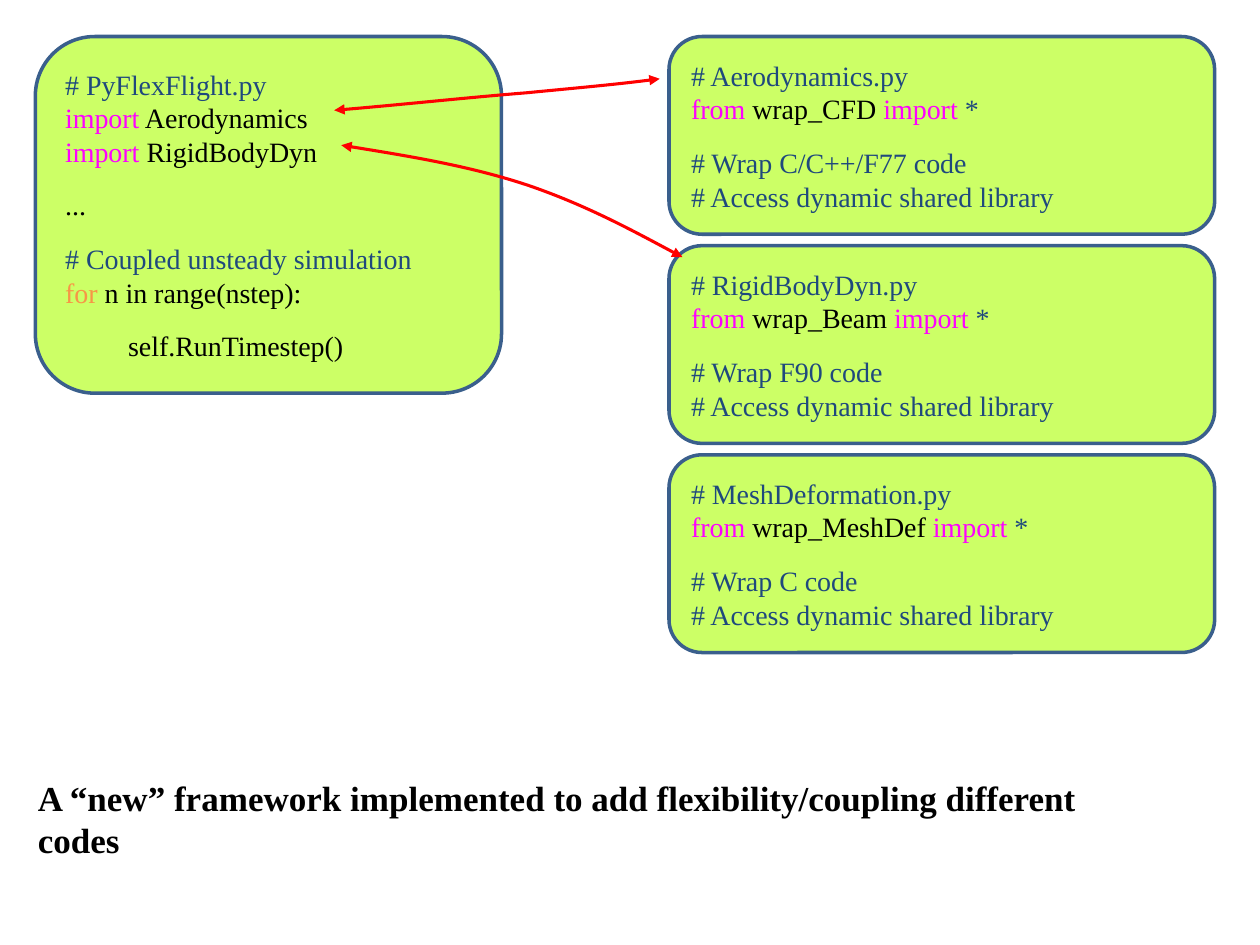
"""Build a slide showing how a Python driver couples wrapped solver modules."""
from pptx import Presentation
from pptx.dml.color import RGBColor
from pptx.enum.shapes import MSO_SHAPE
from pptx.enum.text import MSO_ANCHOR, MSO_AUTO_SIZE, PP_ALIGN
from pptx.oxml.ns import qn
from pptx.util import Pt
from lxml import etree

ROUNDED = MSO_SHAPE.ROUNDED_RECTANGLE
TOP, MIDDLE = MSO_ANCHOR.TOP, MSO_ANCHOR.MIDDLE
LEFT = PP_ALIGN.LEFT
NO_FIT = MSO_AUTO_SIZE.NONE
FONT = "Times New Roman"
COLORS = {
    "box": "CCFF66", "border": "3A5F8C", "arrow": "FF0000",
    "comment": "1F497D", "import": "FF00FF", "loop": "F79646", "plain": "000000",
}
CODE_FORMAT = {"name": FONT, "size": Pt(16), "bold": False}
TITLE_FORMAT = {"name": FONT, "size": Pt(20), "bold": True}
TITLE = "A “new” framework implemented to add flexibility/coupling different codes"
SECTION_GAP = 11.5
INDENT = 36

DRIVER = [
    [
        [("# PyFlexFlight.py", "comment")],
        [("import", "import"), (" Aerodynamics", "plain")],
        [("import ", "import"), ("RigidBodyDyn", "plain")],
    ],
    [[("...", "plain")]],
    [
        [("# Coupled unsteady simulation", "comment")],
        [("for", "loop"), (" n in range(nstep):", "plain")],
    ],
    [[("self.RunTimestep()", "plain")]],
]
MODULES = [
    ("Aerodynamics", "wrap_CFD", "C/C++/F77"),
    ("RigidBodyDyn", "wrap_Beam", "F90"),
    ("MeshDeformation", "wrap_MeshDef", "C"),
]
ARROWS = [
    [(190.8, 62.6), (227.5, 59.8), (264.2, 56.2), (301, 53.3),
     (331.9, 49.7), (355, 47.5), (377.3, 44.6)],
    [(195.1, 82.8), (231.8, 88.6), (269.3, 95), (301.7, 105.8),
     (334.1, 116.6), (362.2, 131.8), (389.5, 146.9)],
]
DRIVER_PLACE = (20.2, 20.9, 266.4, 203.8)
MODULE_PLACE = (382.3, 20.9, 311.8, 113)
MODULE_STEP = 119.5
TITLE_PLACE = (14.4, 439.9, 657.4, 53.3)


def rgb(role):
    return RGBColor.from_string(COLORS[role])


def add_span(para, text, role, style):
    span = para.add_run()
    span.text = text
    for name, value in style.items():
        setattr(span.font, name, value)
    span.font.color.rgb = rgb(role)


def module_sections(module, wrapper, language):
    return [
        [
            [(f"# {module}.py", "comment")],
            [("from ", "import"), (f"{wrapper} ", "plain"),
             ("import ", "import"), ("*", "comment")],
        ],
        [
            [(f"# Wrap {language} code", "comment")],
            [("# Access dynamic shared library", "comment")],
        ],
    ]


def add_code_box(slide, place, sections, indent_last=False):
    box = slide.shapes.add_shape(ROUNDED, *map(Pt, place))
    box.shadow.inherit = False
    box.fill.solid()
    box.fill.fore_color.rgb = rgb("box")
    box.line.color.rgb = rgb("border")
    box.line.width = Pt(2)
    frame = box.text_frame
    frame.word_wrap = True
    frame.vertical_anchor = MIDDLE
    para = None
    for section_index, section in enumerate(sections):
        for line_index, line in enumerate(section):
            para = frame.paragraphs[0] if para is None else frame.add_paragraph()
            para.alignment = LEFT
            if section_index and not line_index:
                para.space_before = Pt(SECTION_GAP)
            for text, role in line:
                add_span(para, text, role, CODE_FORMAT)
    if indent_last:
        para.level = 1
        properties = para._p.get_or_add_pPr()
        properties.set("marL", str(Pt(INDENT)))
        properties.set("indent", "0")


def add_curved_arrow(slide, points):
    builder = slide.shapes.build_freeform(*points[0], scale=Pt(1))
    builder.add_line_segments(points[1:], close=False)
    arrow = builder.convert_to_shape()
    arrow.shadow.inherit = False
    arrow.fill.background()
    arrow.line.color.rgb = rgb("arrow")
    arrow.line.width = Pt(1.75)
    outline = next(arrow._element.iter(qn("a:path")))
    segments = outline.findall(qn("a:lnTo"))
    for start in range(0, len(segments), 3):
        curve = etree.SubElement(outline, qn("a:cubicBezTo"))
        for segment in segments[start:start + 3]:
            curve.append(segment[0])
            outline.remove(segment)
    line = arrow._element.spPr.find(qn("a:ln"))
    for end in ("a:headEnd", "a:tailEnd"):
        etree.SubElement(line, qn(end), type="triangle")


def set_title(slide):
    title = slide.shapes.title
    title.left, title.top, title.width, title.height = map(Pt, TITLE_PLACE)
    frame = title.text_frame
    frame.word_wrap = True
    frame.auto_size = NO_FIT
    frame.vertical_anchor = TOP
    para = frame.paragraphs[0]
    para.alignment = LEFT
    add_span(para, TITLE, "plain", TITLE_FORMAT)


def main():
    deck = Presentation()
    deck.slide_width, deck.slide_height = Pt(720), Pt(540)
    slide = deck.slides.add_slide(deck.slide_layouts[5])
    set_title(slide)
    add_code_box(slide, DRIVER_PLACE, DRIVER, indent_last=True)
    left, top, width, height = MODULE_PLACE
    for index, module in enumerate(MODULES):
        place = (left, top + index * MODULE_STEP, width, height)
        add_code_box(slide, place, module_sections(*module))
    for points in ARROWS:
        add_curved_arrow(slide, points)
    deck.save("out.pptx")


if __name__ == "__main__":
    main()
